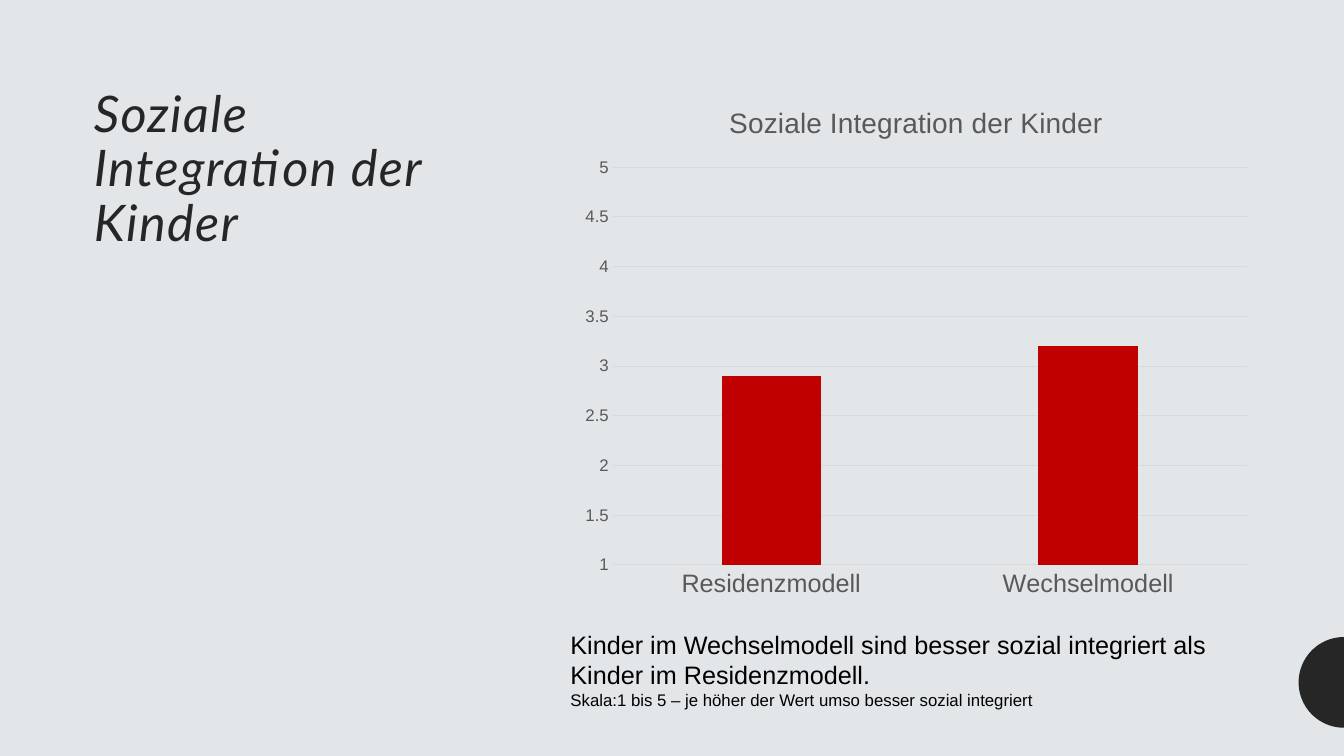
"""Build the slide on the social integration of children under two custody models."""
from dataclasses import dataclass
from math import cos, pi, sin

from pptx import Presentation
from pptx import util as u
from pptx.chart import data
from pptx.dml import color
from pptx.enum import chart as ch
from pptx.enum import text
from pptx.oxml import ns

HEADING = "Soziale Integration der Kinder"
MODELS = {"Residenzmodell": 2.9, "Wechselmodell": 3.2}
SERIES = "Series 1"
SCALE = (1, 5, 0.5)
FINDING = "Kinder im Wechselmodell sind besser sozial integriert als Kinder im Residenzmodell."
SCALE_NOTE = "Skala:1 bis 5 – je höher der Wert umso besser sozial integriert"

WIDTH, HEIGHT = 13.33, 7.5
MARGIN = 0.83
BODY_HEIGHT = HEIGHT - MARGIN - 1.47
HEADING_BOX = (MARGIN, MARGIN, 4.19, BODY_HEIGHT)
CHART_BOX = (5.67, MARGIN, WIDTH - MARGIN - 5.67, BODY_HEIGHT)
NOTES_BOX = (5.56, 6.19, 6.53, 0.91)
DOT_RADIUS, DOT_CENTER, DOT_STEPS = 0.45, 6.77, 48


@dataclass(frozen=True)
class Theme:
    """Colours, fonts and type sizes."""
    ground: str = "E2E6E8"
    dark: str = "262626"
    ink: str = "000000"
    label: str = "595959"
    grid: str = "D9D9D9"
    bar: str = "C00000"
    display: str = "Lato"
    plain: str = "Arial"
    heading: int = 36
    chart_title: int = 20
    large: int = 18
    small: int = 12
    hairline: float = 0.75


THEME = Theme()


def inches(box):
    return [u.Inches(length) for length in box]


def paint(fill, shade):
    fill.solid()
    fill.fore_color.rgb = color.RGBColor.from_string(shade)


def style(font, face, size, shade):
    font.name, font.size = face, u.Pt(size)
    font.bold = False
    font.color.rgb = color.RGBColor.from_string(shade)


def rule(line):
    line.width = u.Pt(THEME.hairline)
    paint(line.fill, THEME.grid)


def add_edge_dot(slide):
    angles = [pi / 2 + pi * step / DOT_STEPS for step in range(DOT_STEPS + 1)]
    rim = [(u.Inches(WIDTH + DOT_RADIUS * cos(angle)),
            u.Inches(DOT_CENTER - DOT_RADIUS * sin(angle))) for angle in angles]
    builder = slide.shapes.build_freeform(*rim[0])
    builder.add_line_segments(rim[1:], close=True)
    dot = builder.convert_to_shape()
    dot.shadow.inherit = False
    dot.line.fill.background()
    paint(dot.fill, THEME.dark)


def add_heading(slide):
    heading = slide.shapes.title
    heading.left, heading.top, heading.width, heading.height = inches(HEADING_BOX)
    frame = heading.text_frame
    frame.text = HEADING
    frame.word_wrap = True
    frame.auto_size = text.MSO_AUTO_SIZE.NONE
    frame.vertical_anchor = text.MSO_ANCHOR.TOP
    line = frame.paragraphs[0]
    line.alignment = text.PP_ALIGN.LEFT
    line.line_spacing = 0.9
    style(line.font, THEME.display, THEME.heading, THEME.dark)
    line.font.italic = True
    line.runs[0]._r.get_or_add_rPr().set("spc", "100")


def add_integration_chart(slide):
    values = data.CategoryChartData()
    values.categories = list(MODELS)
    values.add_series(SERIES, list(MODELS.values()))
    chart = slide.shapes.add_chart(
        ch.XL_CHART_TYPE.COLUMN_CLUSTERED, *inches(CHART_BOX), values).chart
    style(chart.font, THEME.plain, THEME.small, THEME.label)
    chart.has_legend = False
    chart.has_title = True
    chart.chart_title.include_in_layout = False
    title = chart.chart_title.text_frame
    title.text = HEADING
    style(title.paragraphs[0].font, THEME.plain, THEME.chart_title, THEME.label)

    models, scores = chart.category_axis, chart.value_axis
    for axis, size in ((models, THEME.large), (scores, THEME.small)):
        axis.major_tick_mark = axis.minor_tick_mark = ch.XL_TICK_MARK.NONE
        style(axis.tick_labels.font, THEME.plain, size, THEME.label)
    rule(models.format.line)
    scores.format.line.fill.background()
    scores.minimum_scale, scores.maximum_scale, scores.major_unit = SCALE
    scores.has_major_gridlines = True
    rule(scores.major_gridlines.format.line)

    plot = chart.plots[0]
    plot.gap_width, plot.overlap, plot.vary_by_categories = 219, -27, False
    paint(plot.series[0].format.fill, THEME.bar)


def add_notes(slide):
    frame = slide.shapes.add_textbox(*inches(NOTES_BOX)).text_frame
    frame.word_wrap = True
    frame.auto_size = text.MSO_AUTO_SIZE.SHAPE_TO_FIT_TEXT
    frame.text = f"{FINDING}\n{SCALE_NOTE}"
    for line, size in zip(frame.paragraphs, (THEME.large, THEME.small)):
        style(line.font, THEME.plain, size, THEME.ink)


def main():
    deck = Presentation()
    deck.slide_width, deck.slide_height = inches((WIDTH, HEIGHT))
    slide = deck.slides.add_slide(deck.slide_layouts.get_by_name("Title Only"))
    paint(slide.background.fill, THEME.ground)
    add_edge_dot(slide)
    add_heading(slide)
    add_integration_chart(slide)
    add_notes(slide)
    deck.save("out.pptx")


if __name__ == "__main__":
    main()
